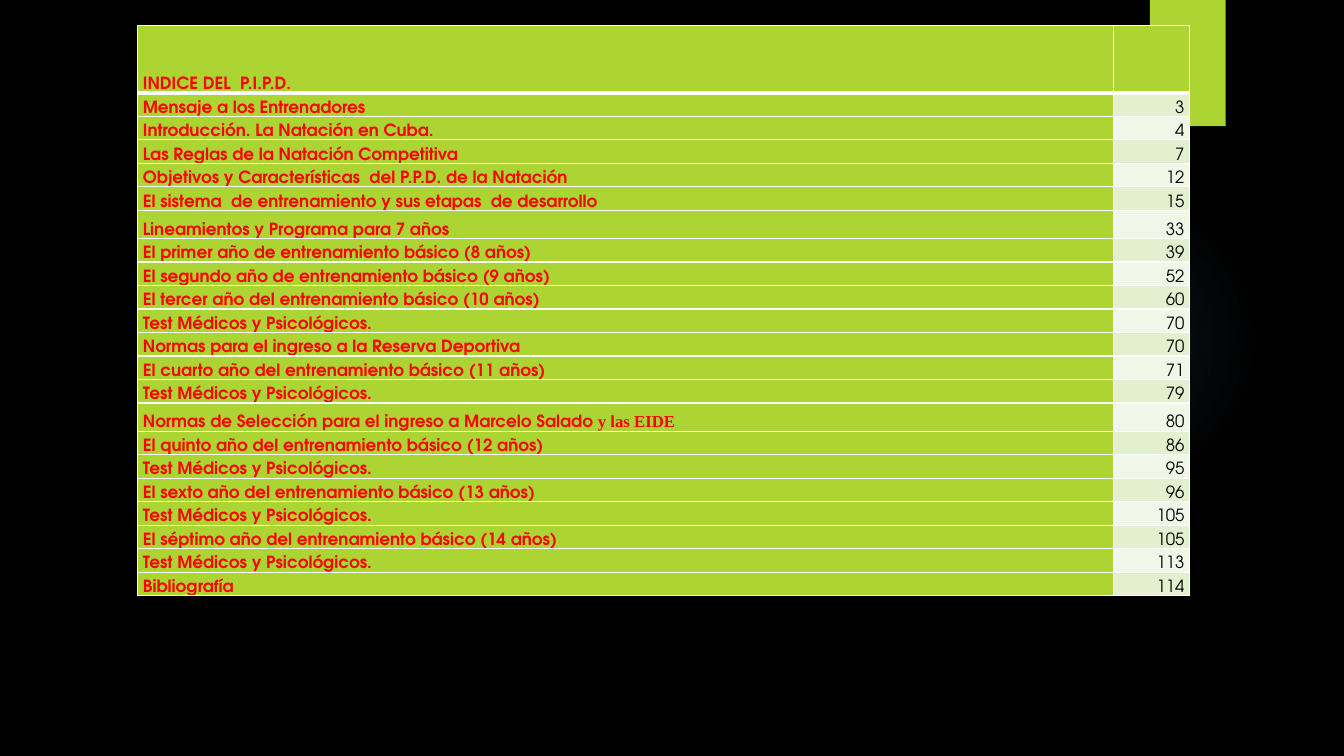
from lxml import etree
from pptx import Presentation
from pptx.dml.color import RGBColor
from pptx.enum.shapes import MSO_SHAPE
from pptx.enum.text import MSO_ANCHOR, PP_ALIGN
from pptx.oxml import parse_xml
from pptx.oxml.ns import nsdecls
from pptx.util import Cm, Pt

LIME, RED, BLACK, WHITE, GLOW = "ACD433", "FF0000", "000000", "FFFFFF", "7AC4F0"
PAGE_BANDS = ("F1F7E8", "E3EFCE")
BODY_FONT = "TeX Gyre Adventor"
TITLE_FORMAT = {"name": BODY_FONT, "size": Pt(12), "bold": True}
PAGE_FORMAT = {"name": BODY_FONT, "size": Pt(12), "bold": False}
CELL_FORMAT = {"vertical_anchor": MSO_ANCHOR.BOTTOM, "margin_left": Cm(0.13),
               "margin_right": Cm(0.13), "margin_top": 0, "margin_bottom": 0}

HEADING = "INDICE DEL  P.I.P.D."
TESTS = "Test Médicos y Psicológicos."
SELECTION = "Normas de Selección para el ingreso a Marcelo Salado"
SELECTION_END = " y las EIDE"
CHAPTERS = [
    ("Mensaje a los Entrenadores", 3),
    ("Introducción. La Natación en Cuba.", 4),
    ("Las Reglas de la Natación Competitiva", 7),
    ("Objetivos y Características  del P.P.D. de la Natación", 12),
    ("El sistema  de entrenamiento y sus etapas  de desarrollo", 15),
    ("Lineamientos y Programa para 7 años", 33),
    ("El primer año de entrenamiento básico (8 años)", 39),
    ("El segundo año de entrenamiento básico (9 años)", 52),
    ("El tercer año del entrenamiento básico (10 años)", 60),
    (TESTS, 70),
    ("Normas para el ingreso a la Reserva Deportiva", 70),
    ("El cuarto año del entrenamiento básico (11 años)", 71),
    (TESTS, 79),
    (SELECTION, 80),
    ("El quinto año del entrenamiento básico (12 años)", 86),
    (TESTS, 95),
    ("El sexto año del entrenamiento básico (13 años)", 96),
    (TESTS, 105),
    ("El séptimo año del entrenamiento básico (14 años)", 105),
    (TESTS, 113),
    ("Bibliografía", 114),
]
HEADING_HEIGHT, ROW_HEIGHT, TALL_HEIGHT = Cm(1.7), Cm(0.56), Cm(0.71)
TALL_ROWS = (6, 14)


def paint(fill, color):
    fill.solid()
    fill.fore_color.rgb = RGBColor.from_string(color)


def apply_format(target, values):
    for key, value in values.items():
        setattr(target, key, value)


def add_plain_shape(slide, kind, *box):
    shape = slide.shapes.add_shape(kind, *(Cm(length) for length in box))
    shape.shadow.inherit = False
    shape.line.fill.background()
    return shape


def add_glow(slide):
    glow = add_plain_shape(slide, MSO_SHAPE.OVAL, 23.9, 4.65, 7.82, 7.82)
    stops = "".join(
        f'<a:gs pos="{pos}000"><a:srgbClr val="{GLOW}">'
        f'<a:alpha val="{alpha}000"/></a:srgbClr></a:gs>'
        for pos, alpha in ((0, 7), (36, 6), (69, 0)))
    gradient = parse_xml(
        f'<a:gradFill {nsdecls("a")}><a:gsLst>{stops}</a:gsLst><a:path path="circle">'
        '<a:fillToRect l="50000" t="50000" r="50000" b="50000"/></a:path></a:gradFill>')
    outline = glow.element.spPr.find("{*}prstGeom")
    outline.addnext(gradient)


def add_borders(cell, bottom_width):
    properties = cell._tc.get_or_add_tcPr()
    for index, side in enumerate("LRTB"):
        width = Pt(bottom_width if side == "B" else 1)
        properties.insert(index, parse_xml(
            f'<a:ln{side} {nsdecls("a")} w="{width}"><a:solidFill>'
            f'<a:srgbClr val="{WHITE}"/></a:solidFill></a:ln{side}>'))


def add_words(paragraph, words, color, font_format):
    run = paragraph.add_run()
    run.text = words
    apply_format(run.font, font_format)
    run.font.color.rgb = RGBColor.from_string(color)


def fill_cell(cell, words, fill, color, font_format, align, bottom_width=1):
    apply_format(cell, CELL_FORMAT)
    paint(cell.fill, fill)
    add_borders(cell, bottom_width)
    paragraph = cell.text_frame.paragraphs[0]
    apply_format(paragraph, {"alignment": align, "line_spacing": 1.5})
    if words:
        add_words(paragraph, words, color, font_format)
    return paragraph


def add_index(slide):
    rows = [(HEADING, "")] + CHAPTERS
    index = slide.shapes.add_table(len(rows), 2, Cm(3.47), Cm(0.64),
                                   Cm(26.51), Cm(14)).table
    apply_format(index, {"first_row": False, "horz_banding": False})
    for column, width in zip(index.columns, (24.6, 1.91)):
        column.width = Cm(width)

    for number, (title, page) in enumerate(rows):
        heading = number == 0
        bottom_width = 3 if heading else 1
        index.rows[number].height = (HEADING_HEIGHT if heading else
                                     TALL_HEIGHT if number in TALL_ROWS else ROW_HEIGHT)
        title_line = fill_cell(index.cell(number, 0), title, LIME, RED,
                               TITLE_FORMAT, PP_ALIGN.LEFT, bottom_width)
        if title == SELECTION:
            add_words(title_line, SELECTION_END, RED,
                      TITLE_FORMAT | {"name": "Times New Roman"})
        page_fill = LIME if heading else PAGE_BANDS[number % 2]
        fill_cell(index.cell(number, 1), str(page), page_fill, BLACK,
                  PAGE_FORMAT, PP_ALIGN.RIGHT, bottom_width)


def main():
    deck = Presentation()
    deck.slide_width, deck.slide_height = Cm(33.87), Cm(19.05)
    slide = deck.slides.add_slide(deck.slide_layouts[6])

    # Backdrop: black ground, faint glow and corner tab
    paint(slide.background.fill, BLACK)
    add_glow(slide)
    corner_tab = add_plain_shape(slide, MSO_SHAPE.RECTANGLE, 28.98, 0, 1.91, 3.18)
    paint(corner_tab.fill, LIME)

    # Table of contents
    add_index(slide)
    deck.save("out.pptx")


if __name__ == "__main__":
    main()
